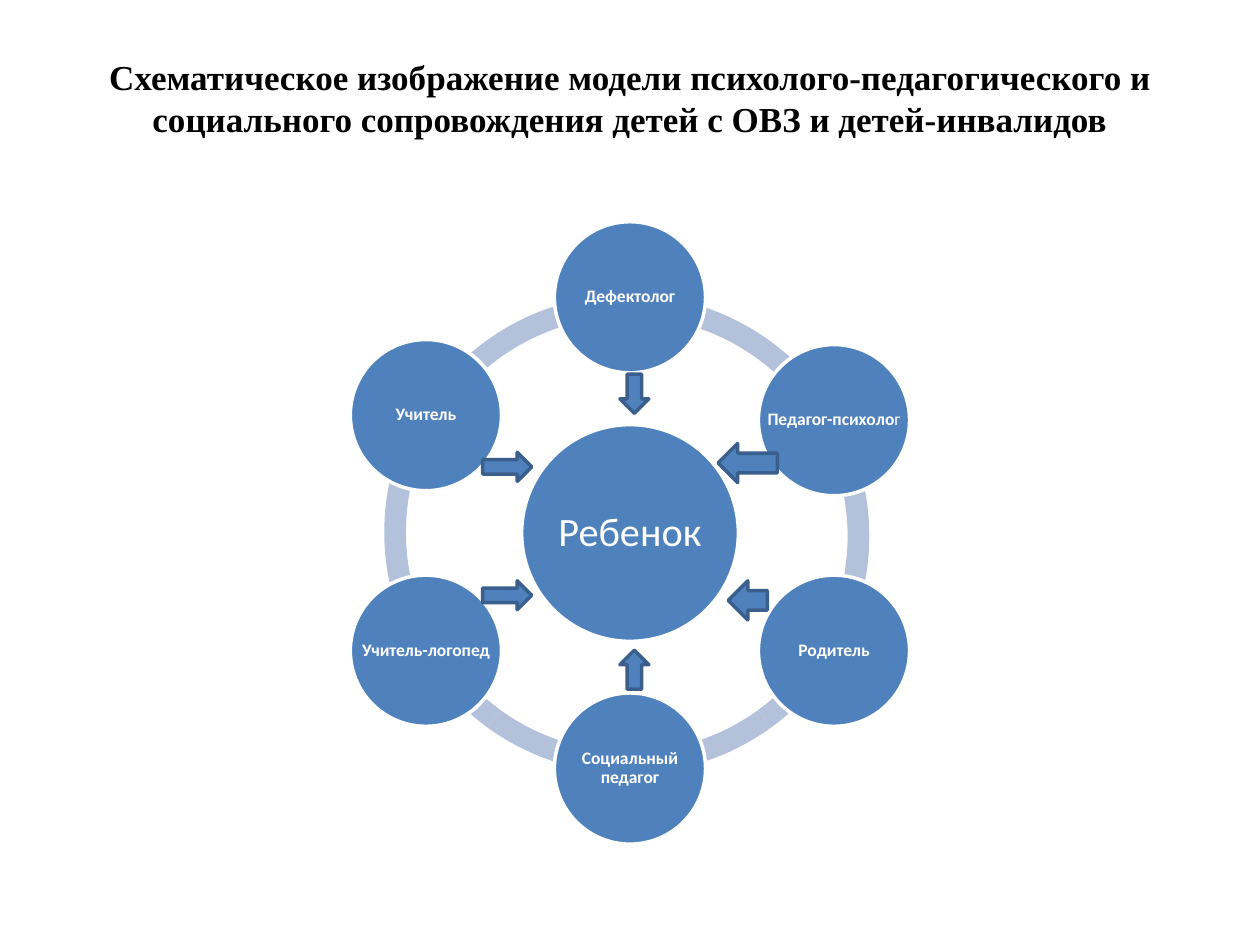
from math import cos, radians, sin

from pptx import Presentation
from pptx.dml.color import RGBColor
from pptx.enum.shapes import MSO_SHAPE as Form
from pptx.enum.text import MSO_ANCHOR as Anchor, PP_ALIGN as Align
from pptx.util import Inches, Pt

BLUE, PALE, NAVY, WHITE, BLACK = "4F81BD", "B3C1DB", "3A5F8C", "FFFFFF", "000000"

TITLE = ("Схематическое изображение модели психолого-педагогического и "
         "социального сопровождения детей с ОВЗ и детей-инвалидов")

MID_X, MID_Y = 5, 4.23
ORBIT = 1.87

# Runs of each label, clockwise from the top, and a shift down
ROLES = [
    (["Дефектолог"], 0),
    (["Педагог-психоло", "г"], 0.04),
    (["Родитель"], 0),
    (["Социальный педагог"], 0),
    (["Учитель-логопед"], 0),
    (["Учитель"], 0),
]

# Left, top, start angle, end angle
ARCS = [(3.08, 2.31, start, start + 36) for start in (126, 90, 54, 18)]
ARCS += [(3.07, 2.34, 198.41, 17.41), (3.05, 2.31, 162.58, 199)]

ARROWS = [
    (Form.DOWN_ARROW, 4.92, 2.97, 0.23, 0.31),
    (Form.RIGHT_ARROW, 3.83, 3.59, 0.39, 0.23),
    (Form.LEFT_ARROW, 5.7, 3.52, 0.47, 0.31),
    (Form.UP_ARROW, 4.92, 5.16, 0.23, 0.31),
    (Form.RIGHT_ARROW, 3.83, 4.61, 0.39, 0.23),
    (Form.LEFT_ARROW, 5.78, 4.61, 0.31, 0.31),
]


def paint(color, value):
    color.rgb = RGBColor.from_string(value)


def write(frame, *runs, size, font="Calibri", color=WHITE, bold=False,
          inset=0.01, bottom=None, spacing=0.9, wrap=True):
    """Fill a frame with one centred paragraph; only its first run is bold."""
    frame.word_wrap = wrap
    frame.vertical_anchor = Anchor.MIDDLE
    frame.margin_left = frame.margin_right = frame.margin_top = Inches(inset)
    frame.margin_bottom = Inches(inset if bottom is None else bottom)
    para = frame.paragraphs[0]
    para.alignment = Align.CENTER
    para.line_spacing = spacing
    for index, text in enumerate(runs):
        run = para.add_run()
        run.text = text
        run.font.name, run.font.size = font, Pt(size)
        run.font.bold = bold and index == 0
        paint(run.font.color, color)


class Sheet:
    def __init__(self, slide):
        self.slide = slide
        self.shapes = slide.shapes

    def title(self, text):
        box = self.slide.shapes.title
        box.left, box.top = Inches(0.5), Inches(0.3)
        box.width, box.height = Inches(9), Inches(1.25)
        # The deep lower margin lifts the two lines above the middle
        write(box.text_frame, text, size=20, font="Times New Roman", color=BLACK,
              bold=True, inset=0.05, bottom=0.36, spacing=1)

    def shape(self, form, left, top, width, height, fill=BLUE, line=None):
        item = self.shapes.add_shape(
            form, Inches(left), Inches(top), Inches(width), Inches(height))
        item.shadow.inherit = False
        item.fill.solid()
        paint(item.fill.fore_color, fill)
        if line:
            paint(item.line.color, line)
            item.line.width = Pt(2)
        else:
            item.line.fill.background()
        return item

    def arc(self, left, top, start, end):
        item = self.shape(Form.BLOCK_ARC, left, top, 3.83, 3.83, PALE)
        # Angles are stored in 60000ths of a degree, scaled here by 100000
        for index, value in enumerate((start * 0.6, end * 0.6, 0.045)):
            item.adjustments[index] = value

    def disc(self, x, y, width, *runs, **style):
        """Draw a labelled circle around the point x, y."""
        item = self.shape(Form.OVAL, x - width / 2, y - width / 2, width, width,
                          line=WHITE)
        write(item.text_frame, *runs, wrap=" " in runs[0], **style)


def main():
    deck = Presentation()
    deck.slide_width, deck.slide_height = Inches(10), Inches(7.5)
    sheet = Sheet(deck.slides.add_slide(deck.slide_layouts[5]))
    sheet.title(TITLE)

    sheet.shapes = sheet.slide.shapes.add_group_shape().shapes
    for arc in ARCS:
        sheet.arc(*arc)
    sheet.disc(MID_X, MID_Y, 1.72, "Ребенок", size=23, inset=0.03)
    for index, (runs, shift) in enumerate(ROLES):
        angle = radians(360 / len(ROLES) * index - 90)
        sheet.disc(MID_X + ORBIT * cos(angle), MID_Y + ORBIT * sin(angle) + shift,
                   1.2, *runs, size=10, bold=True)

    sheet.shapes = sheet.slide.shapes
    for arrow in ARROWS:
        sheet.shape(*arrow, line=NAVY)

    deck.save("out.pptx")


if __name__ == "__main__":
    main()
